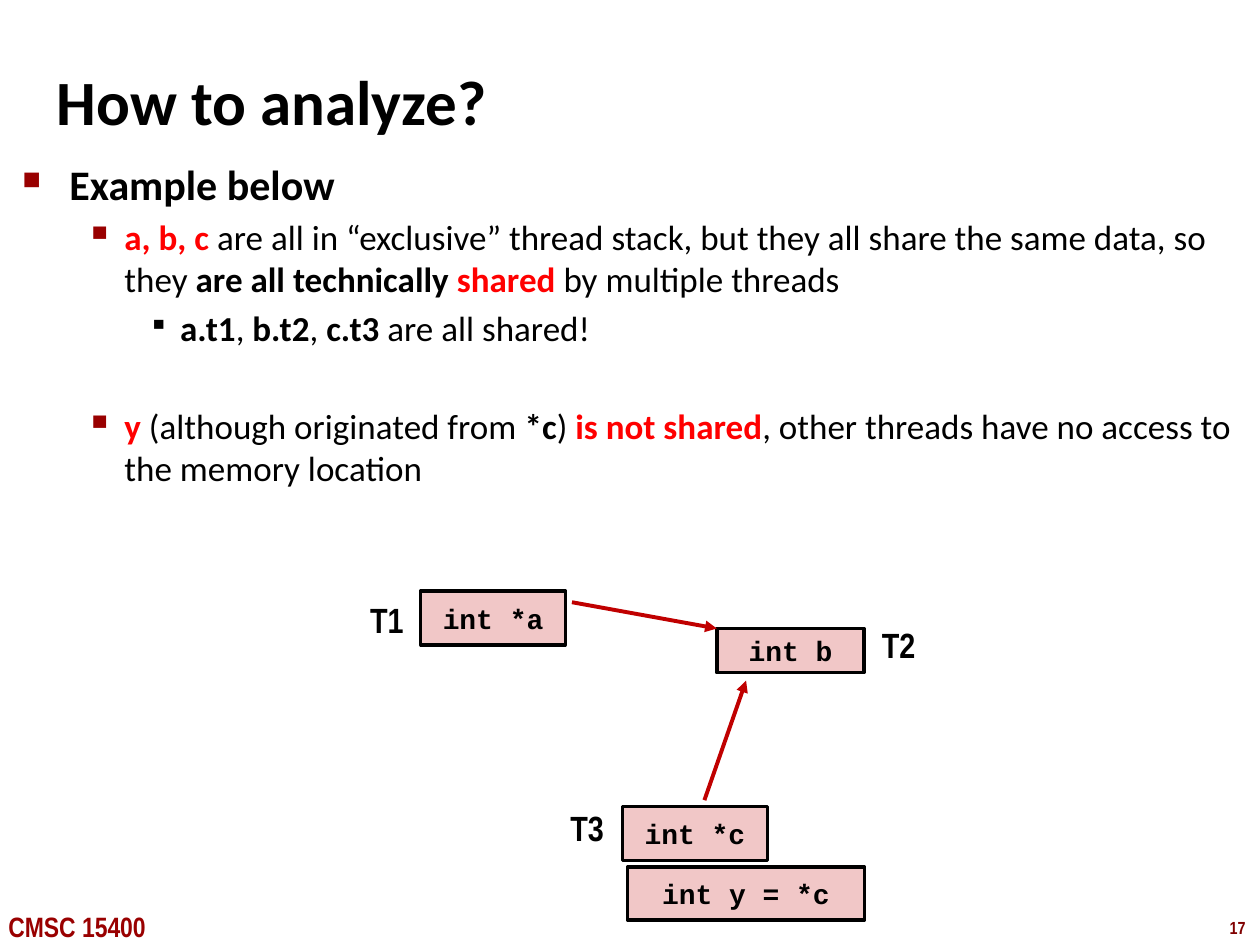
from dataclasses import dataclass

from lxml import etree
from pptx import Presentation
from pptx.dml.color import RGBColor
from pptx.enum.shapes import MSO_CONNECTOR, MSO_SHAPE
from pptx.enum.text import MSO_ANCHOR, MSO_AUTO_SIZE, PP_ALIGN
from pptx.oxml.ns import qn
from pptx.util import Cm, Pt

BLACK = RGBColor(0x00, 0x00, 0x00)
RED = RGBColor(0xFF, 0x00, 0x00)
CRIMSON = RGBColor(0x99, 0x00, 0x00)
MAROON = RGBColor(0x80, 0x00, 0x00)
ARROW_RED = RGBColor(0xC0, 0x00, 0x00)
PINK = RGBColor(0xF1, 0xC7, 0xC7)

BODY_FONT = "Calibri"
LABEL_FONT = "Arial Narrow"
CODE_FONT = "Courier New"

RECTANGLE = MSO_SHAPE.RECTANGLE
STRAIGHT = MSO_CONNECTOR.STRAIGHT
MIDDLE, TOP = MSO_ANCHOR.MIDDLE, MSO_ANCHOR.TOP
LEFT, CENTER = PP_ALIGN.LEFT, PP_ALIGN.CENTER
GROW, NO_FIT = MSO_AUTO_SIZE.SHAPE_TO_FIT_TEXT, MSO_AUTO_SIZE.NONE


@dataclass(frozen=True)
class Level:
    margin: float  # cm
    hanging: float  # cm
    bullet: str
    bullet_percent: int
    bullet_color: RGBColor
    size: int


@dataclass(frozen=True)
class Span:
    text: str
    bold: bool = False
    color: RGBColor = BLACK


@dataclass(frozen=True)
class Point:
    level: Level
    space_before: int
    spans: tuple[Span, ...]


@dataclass(frozen=True)
class Variable:
    code: str
    left: float
    top: float
    width: float
    height: float


@dataclass(frozen=True)
class Label:
    text: str
    left: float
    top: float
    width: float = 1.19
    height: float = 1.12
    size: int = 20
    color: RGBColor = BLACK


@dataclass(frozen=True)
class Pointer:
    start: tuple[float, float]
    end: tuple[float, float]


HEADING = Level(0.95, 0.95, "■", 60, CRIMSON, 24)
DETAIL = Level(2.06, 0.79, "▪", 110, CRIMSON, 20)
EXAMPLE = Level(3.18, 0.64, "▪", 80, BLACK, 20)

POINTS = (
    Point(HEADING, 0, (Span("Example below", True),)),
    Point(DETAIL, 4, (
        Span("a, b, c ", True, RED),
        Span("are all in “exclusive” thread stack, but they all share the same data, so they "),
        Span("are all technically ", True),
        Span("shared ", True, RED),
        Span("by multiple threads"),
    )),
    Point(EXAMPLE, 4, (
        Span("a.t1", True), Span(", "), Span("b.t2", True), Span(", "),
        Span("c.t3 ", True), Span("are all shared!"),
    )),
    Point(DETAIL, 32, (
        Span("y", True, RED),
        Span(" (although originated from "),
        Span("*c", True),
        Span(") "),
        Span("is not shared", True, RED),
        Span(", other threads have no access to the memory location"),
    )),
)

VARIABLES = (
    Variable("int *a", 8.48, 11.91, 2.92, 1.09),
    Variable("int b", 14.45, 12.67, 2.97, 0.89),
    Variable("int *c", 12.55, 16.26, 2.92, 1.09),
    Variable("int y = *c", 12.65, 17.48, 4.78, 1.07),
)

LABELS = (
    Label("T1", 7.21, 11.94),
    Label("T2", 17.53, 12.45),
    Label("T3", 11.25, 16.13),
    Label("CMSC 15400", -0.08, 18.21, 3.61, 0.94, 16, CRIMSON),
    Label("17", 24.54, 18.36, 0.86, 0.69, 10, MAROON),
)

POINTERS = (
    Pointer((11.53, 12.14), (14.45, 12.67)),
    Pointer((14.2, 16.13), (15.04, 13.72)),
)


def style_font(font, name: str, size: int, color: RGBColor = BLACK, bold: bool = True) -> None:
    font.name, font.size, font.bold = name, Pt(size), bold
    font.color.rgb = color


def set_bullet(paragraph, level: Level) -> None:
    properties = paragraph._p.get_or_add_pPr()
    properties.set("marL", str(Cm(level.margin)))
    properties.set("indent", str(-Cm(level.hanging)))
    color = etree.SubElement(properties, qn("a:buClr"))
    etree.SubElement(color, qn("a:srgbClr"), val=str(level.bullet_color))
    etree.SubElement(properties, qn("a:buSzPct"), val=str(level.bullet_percent * 1000))
    etree.SubElement(properties, qn("a:buChar"), char=level.bullet)


def add_title(slide, text: str) -> None:
    title = slide.shapes.title
    title.left, title.top, title.width, title.height = Cm(0.89), Cm(0.97), Cm(21.08), Cm(2.11)
    frame = title.text_frame
    frame.text = text
    frame.auto_size, frame.vertical_anchor = NO_FIT, MIDDLE
    paragraph = frame.paragraphs[0]
    paragraph.alignment = LEFT
    style_font(paragraph.font, BODY_FONT, 36)


def add_points(slide, points: tuple[Point, ...]) -> None:
    frame = slide.shapes.add_textbox(Cm(0.2), Cm(3.07), Cm(25.27), Cm(2.36)).text_frame
    frame.word_wrap, frame.vertical_anchor = True, TOP
    for index, point in enumerate(points):
        paragraph = frame.add_paragraph() if index else frame.paragraphs[0]
        set_bullet(paragraph, point.level)
        paragraph.space_before = Pt(point.space_before)
        for span in point.spans:
            run = paragraph.add_run()
            run.text = span.text
            style_font(run.font, BODY_FONT, point.level.size, span.color, span.bold)


def add_variable(slide, variable: Variable) -> None:
    box = slide.shapes.add_shape(RECTANGLE, Cm(variable.left), Cm(variable.top),
                                 Cm(variable.width), Cm(variable.height))
    box.shadow.inherit = False
    box.fill.solid()
    box.fill.fore_color.rgb = PINK
    box.line.color.rgb, box.line.width = BLACK, Pt(2)
    frame = box.text_frame
    frame.text = variable.code
    frame.word_wrap, frame.vertical_anchor = False, MIDDLE
    paragraph = frame.paragraphs[0]
    paragraph.alignment = CENTER
    style_font(paragraph.font, CODE_FONT, 16)


def add_label(slide, label: Label) -> None:
    frame = slide.shapes.add_textbox(Cm(label.left), Cm(label.top),
                                     Cm(label.width), Cm(label.height)).text_frame
    frame.text = label.text
    frame.word_wrap, frame.auto_size = False, GROW
    style_font(frame.paragraphs[0].font, LABEL_FONT, label.size, label.color)


def add_pointer(slide, pointer: Pointer) -> None:
    ends = [Cm(value) for value in (*pointer.start, *pointer.end)]
    arrow = slide.shapes.add_connector(STRAIGHT, *ends)
    arrow.line.color.rgb, arrow.line.width = ARROW_RED, Pt(2.25)
    etree.SubElement(arrow.line._get_or_add_ln(), qn("a:tailEnd"), type="triangle")
    etree.SubElement(arrow._element.spPr, qn("a:effectLst"))


def main() -> None:
    presentation = Presentation()
    presentation.slide_width, presentation.slide_height = Cm(25.4), Cm(19.05)
    slide = presentation.slides.add_slide(presentation.slide_layouts[5])
    add_title(slide, "How to analyze?")
    add_points(slide, POINTS)
    for draw, items in ((add_variable, VARIABLES), (add_label, LABELS), (add_pointer, POINTERS)):
        for item in items:
            draw(slide, item)
    presentation.save("out.pptx")


if __name__ == "__main__":
    main()
